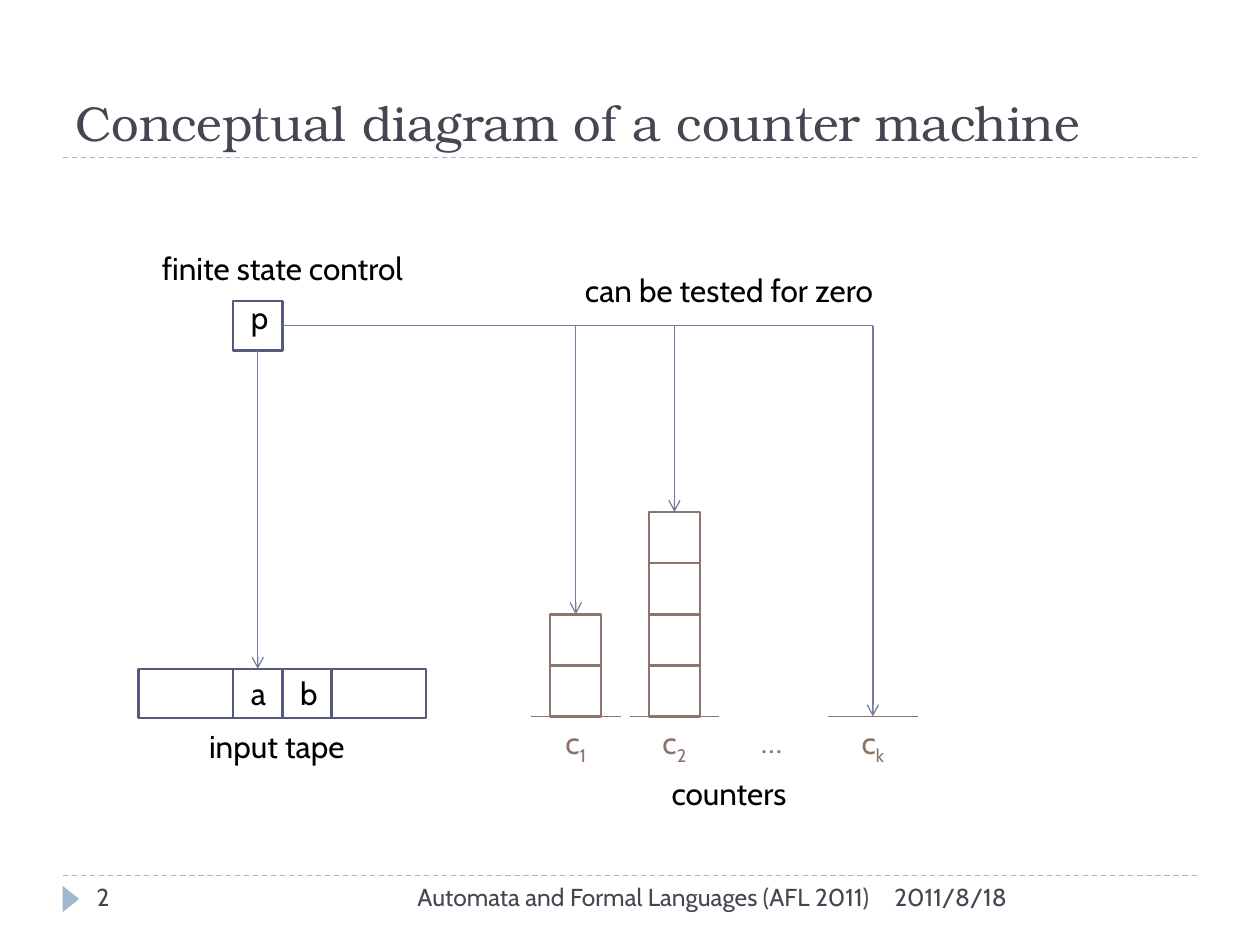
from dataclasses import dataclass

from lxml.etree import SubElement
from pptx import Presentation
from pptx.dml.color import RGBColor
from pptx.enum.dml import MSO_LINE_DASH_STYLE as Dash
from pptx.enum.shapes import MSO_CONNECTOR as Connector, MSO_SHAPE as Shape
from pptx.enum.text import MSO_ANCHOR as Anchor, MSO_AUTO_SIZE as AutoSize, PP_ALIGN as Align
from pptx.oxml.ns import qn
from pptx.util import Pt


@dataclass(frozen=True)
class Theme:
    heading_font: str = "TeX Gyre Bonum"
    body_font: str = "Cabin"
    ink: str = "000000"
    muted: str = "464653"
    rule: str = "9FB8CD"
    control: str = "545C79"
    wire: str = "727CA3"
    counter: str = "8E736A"
    title_size: float = 28
    label_size: float = 18
    footer_size: float = 14
    thin: float = 0.75
    thick: float = 1.5


@dataclass(frozen=True)
class Label:
    text: str
    left: float
    top: float
    width: float
    align: Align = Align.CENTER
    color: str = Theme.ink
    size: float = Theme.label_size
    subscript: str = ""
    grows: bool = True


@dataclass(frozen=True)
class Counter:
    index: str
    center: float
    height: int


THEME = Theme()
TOP, BOTTOM, RIGHT = 0, 2, 3
LABEL_HEIGHT = 29
CELL = 28.2
STATE_LEFT, STATE_TOP = 133.2, 172
TAPE_LEFT, TAPE_TOP, TAPE_WIDTH = 79.2, 382.2, 164.2
WIRE_Y = STATE_TOP + CELL / 2
BLOCK = 29.2
BASE_Y = 409.4
BASE_WIDTH = 51.2
COUNTER_LABEL_WIDTH = 34

COUNTERS = [Counter("1", 329, 2), Counter("2", 385.4, 4), Counter("k", 498.8, 0)]

LABELS = [
    Label("finite state control", TAPE_LEFT, 139, TAPE_WIDTH),
    Label("p", 136.2, 167, 22.3, Align.LEFT),
    Label("a", 136.2, 381.6, 22.3, Align.LEFT),
    Label("b", 136.2 + CELL, 381.6, 22.3, Align.LEFT),
    Label("input tape", 98.7, 411.8, 119),
    Label("can be tested for zero", 308.9, 151.2, 215.3),
    Label("counters", 357.1, 438.5, 119),
    Label("…", 427.7, 409, 36.7, Align.LEFT, THEME.counter),
]

FOOTER = [
    Label(text, left, 500.4, width, align, THEME.muted, THEME.footer_size, grows=False)
    for text, left, width, align in [
        ("2", 48.2, 156.2, Align.LEFT),
        ("Automata and Formal Languages (AFL 2011)", 228.2, 275.8, Align.RIGHT),
        ("2011/8/18", 504, 180, Align.LEFT),
    ]
]


def style_run(run, color: str, size: float, font: str = THEME.body_font) -> None:
    run.font.name = font
    run.font.size = Pt(size)
    run.font.color.rgb = RGBColor.from_string(color)


def draw_label(slide, label: Label) -> None:
    box = slide.shapes.add_textbox(Pt(label.left), Pt(label.top), Pt(label.width), Pt(LABEL_HEIGHT))
    frame = box.text_frame
    frame.word_wrap = True
    if label.grows:
        frame.auto_size = AutoSize.SHAPE_TO_FIT_TEXT
    paragraph = frame.paragraphs[0]
    paragraph.text = label.text
    paragraph.alignment = label.align
    if label.subscript:
        index = paragraph.add_run()
        index.text = label.subscript
        index._r.get_or_add_rPr().set("baseline", "-25000")
    for run in paragraph.runs:
        style_run(run, label.color, label.size)


def draw_cell(slide, left: float, top: float, width: float, height: float, color: str):
    cell = slide.shapes.add_shape(Shape.RECTANGLE, Pt(left), Pt(top), Pt(width), Pt(height))
    cell.shadow.inherit = False
    cell.fill.background()
    cell.line.color.rgb = RGBColor.from_string(color)
    cell.line.width = Pt(THEME.thick)
    return cell


def draw_line(slide, start: tuple[float, float], end: tuple[float, float], color: str,
              arrow: bool = False, dashed: bool = False):
    line = slide.shapes.add_connector(Connector.STRAIGHT, *map(Pt, start + end))
    line.line.color.rgb = RGBColor.from_string(color)
    line.line.width = Pt(THEME.thin)
    if dashed:
        line.line.dash_style = Dash.DASH
    if arrow:
        SubElement(line.line._get_or_add_ln(), qn("a:tailEnd"), type="arrow")
    SubElement(line._element.spPr, qn("a:effectLst"))
    return line


def draw_frame(slide) -> None:
    for y in (90, 500.4):
        draw_line(slide, (36, y), (684, y), THEME.rule, dashed=True)
    marker = slide.shapes.add_shape(Shape.ISOSCELES_TRIANGLE, Pt(33), Pt(509), Pt(15), Pt(9.4))
    marker.rotation = 90
    marker.shadow.inherit = False
    marker.fill.solid()
    marker.fill.fore_color.rgb = RGBColor.from_string(THEME.rule)
    marker.line.fill.background()

    title = slide.shapes.title
    title.left, title.top, title.width, title.height = map(Pt, (36, 12.2, 648, 77.8))
    title.text_frame.text = "Conceptual diagram of a counter machine"
    title.text_frame.vertical_anchor = Anchor.BOTTOM
    heading = title.text_frame.paragraphs[0]
    heading.alignment = Align.LEFT
    style_run(heading.runs[0], THEME.muted, THEME.title_size, THEME.heading_font)


def draw_control_and_tape(slide) -> None:
    state = draw_cell(slide, STATE_LEFT, STATE_TOP, CELL, CELL, THEME.control)
    draw_cell(slide, TAPE_LEFT, TAPE_TOP, TAPE_WIDTH, CELL, THEME.control)
    draw_cell(slide, STATE_LEFT + CELL, TAPE_TOP, CELL, CELL, THEME.control)
    scanned = draw_cell(slide, STATE_LEFT, TAPE_TOP, CELL, CELL, THEME.control)
    center = STATE_LEFT + CELL / 2
    head = draw_line(slide, (center, STATE_TOP + CELL), (center, TAPE_TOP), THEME.wire, arrow=True)
    head.begin_connect(state, BOTTOM)
    head.end_connect(scanned, TOP)
    bus = draw_line(slide, (STATE_LEFT + CELL, WIRE_Y), (COUNTERS[-1].center, WIRE_Y), THEME.wire)
    bus.begin_connect(state, RIGHT)


def draw_counter(slide, counter: Counter) -> None:
    x = counter.center
    draw_line(slide, (x - BASE_WIDTH / 2, BASE_Y), (x + BASE_WIDTH / 2, BASE_Y), THEME.counter)
    blocks = [
        draw_cell(slide, x - BLOCK / 2, BASE_Y - level * BLOCK, BLOCK, BLOCK, THEME.counter)
        for level in range(1, counter.height + 1)
    ]
    probe = draw_line(slide, (x, WIRE_Y), (x, BASE_Y - counter.height * BLOCK), THEME.wire, arrow=True)
    if blocks:
        probe.end_connect(blocks[-1], TOP)
    draw_label(slide, Label("c", x - COUNTER_LABEL_WIDTH / 2, BASE_Y, COUNTER_LABEL_WIDTH,
                            color=THEME.counter, subscript=counter.index))


def main() -> None:
    deck = Presentation()
    deck.slide_width, deck.slide_height = Pt(720), Pt(540)
    slide = deck.slides.add_slide(deck.slide_layouts[5])
    draw_frame(slide)
    draw_control_and_tape(slide)
    for counter in COUNTERS:
        draw_counter(slide, counter)
    for label in LABELS + FOOTER:
        draw_label(slide, label)
    deck.save("out.pptx")


if __name__ == "__main__":
    main()
